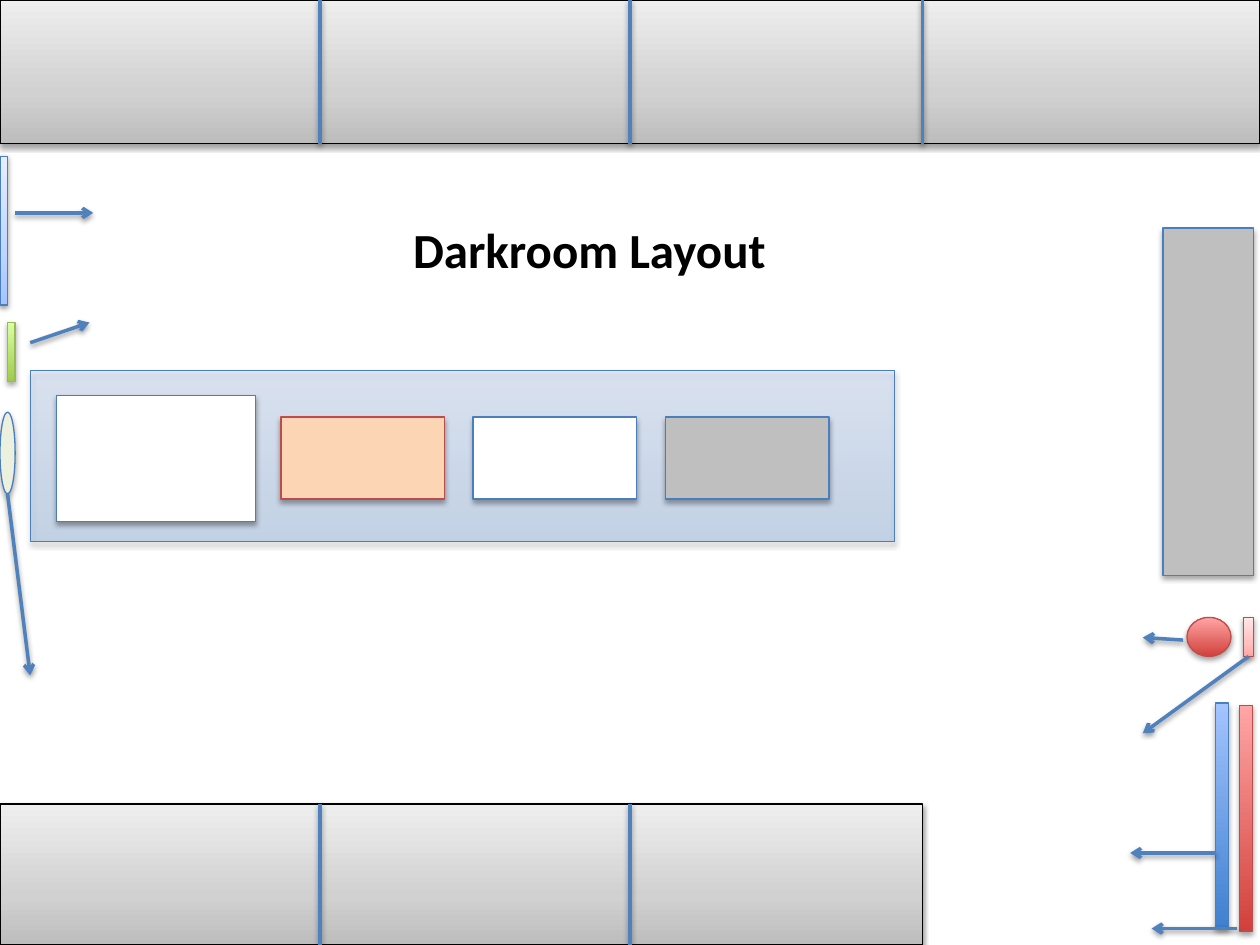
import pptx
import pptx.util
import pptx.dml.color
import pptx.enum.shapes
import pptx.oxml
import pptx.oxml.ns

Inches = pptx.util.Inches
Pt = pptx.util.Pt
RGBColor = pptx.dml.color.RGBColor
RECT = pptx.enum.shapes.MSO_SHAPE.RECTANGLE
OVAL = pptx.enum.shapes.MSO_SHAPE.OVAL
STRAIGHT = pptx.enum.shapes.MSO_CONNECTOR.STRAIGHT
SPACE = pptx.oxml.ns.nsdecls("a")

BLACK = RGBColor(0x00, 0x00, 0x00)
WHITE = RGBColor(0xFF, 0xFF, 0xFF)
GRAY = RGBColor(0xBF, 0xBF, 0xBF)
PEACH = RGBColor(0xFC, 0xD5, 0xB5)
CREAM = RGBColor(0xEB, 0xF1, 0xDE)
BLUE = RGBColor(0x4F, 0x81, 0xBD)
NAVY = RGBColor(0x4B, 0x7E, 0xBC)
RED = RGBColor(0xBF, 0x4C, 0x48)
GREEN = RGBColor(0x98, 0xB9, 0x55)


def shades(*stops):
    return [(pos, RGBColor.from_string(tone)) for pos, tone in stops]


STEEL = shades((0, "BDBDBD"), (35, "D1D1D1"), (100, "EEEEEE"))
SEA = shades((0, "3F80CE"), (100, "A4C4FF"))
SKY = shades((0, "A4C4FF"), (35, "BFD4FF"), (100, "E6EEFF"))
LIME = shades((0, "A0CA4A"), (100, "DAFFA5"))
ROSE = shades((0, "D1403C"), (100, "FFA6A5"))
PINK = shades((0, "FFA6A5"), (35, "FFC0BF"), (100, "FFE7E7"))


def blend(props, stops, alpha):
    marks = "".join(
        f'<a:gs pos="{pos * 1000}"><a:srgbClr val="{tone}">'
        f'<a:alpha val="{alpha * 1000}"/></a:srgbClr></a:gs>'
        for pos, tone in stops)
    props.insert(2, pptx.oxml.parse_xml(
        f'<a:gradFill {SPACE} rotWithShape="1"><a:gsLst>{marks}</a:gsLst>'
        '<a:lin ang="16200000" scaled="0"/></a:gradFill>'))


def shade(props, alpha, gap):
    props.append(pptx.oxml.parse_xml(
        f'<a:effectLst {SPACE}><a:outerShdw blurRad="{Pt(3.1)}" dist="{Pt(gap)}" '
        'dir="5400000" rotWithShape="0"><a:srgbClr val="000000">'
        f'<a:alpha val="{alpha * 1000}"/></a:srgbClr></a:outerShdw></a:effectLst>'))


def block(slide, box, fill, edge=NAVY, kind=RECT, alpha=100):
    shape = slide.shapes.add_shape(kind, *map(Inches, box))
    props = shape._element.spPr
    if isinstance(fill, list):
        blend(props, fill, alpha)
    else:
        shape.fill.solid()
        shape.fill.fore_color.rgb = fill
    shape.line.color.rgb = edge
    shape.line.width = Pt(0.75)
    soft = isinstance(fill, list) and len(fill) == 3
    shade(props, *((38, 1.6) if soft else (35, 1.8)))


def stroke(slide, start, end, arrow=False):
    line = slide.shapes.add_connector(STRAIGHT, *map(Inches, start + end))
    line.line.color.rgb = BLUE
    line.line.width = Pt(2)
    if arrow:
        line.line._get_or_add_ln().append(
            pptx.oxml.parse_xml(f'<a:tailEnd {SPACE} type="arrow"/>'))
    shade(line._element.spPr, 38, 1.6)


def counter(slide, box, seams):
    left, top, width, height = box
    block(slide, box, STEEL, BLACK)
    for seam in seams:
        stroke(slide, (left + seam, top), (left + seam, top + height))


def island(slide, box):
    left, top, width, height = box
    block(slide, box, SEA, alpha=23)
    block(slide, (left + 0.21, top + 0.2, 1.58, 1), WHITE)
    trays = [(PEACH, RED), (WHITE, NAVY), (GRAY, NAVY)]
    for place, (fill, edge) in enumerate(trays):
        spot = left + 1.99 + place * 1.525
        block(slide, (spot, top + 0.37, 1.3, 0.65), fill, edge)


def title(slide, box):
    area = slide.shapes.add_textbox(*map(Inches, box))
    area.text_frame.word_wrap = True
    area.text_frame.text = "Darkroom Layout"
    font = area.text_frame.paragraphs[0].runs[0].font
    font.name = "Calibri"
    font.size = Pt(28)
    font.bold = True
    font.color.rgb = BLACK


def wall(slide, box, parts, arrows):
    left, top = box[:2]
    for (x, y, wide, high), *style in parts:
        block(slide, (left + x, top + y, wide, high), *style)
    for (x, y), (across, down) in arrows:
        start = left + x, top + y
        stroke(slide, start, (start[0] + across, start[1] + down), True)


def west(slide, box):
    wall(slide, box, [
        ((0, 0, 0.06, 1.18), SKY),
        ((0.06, 1.32, 0.06, 0.47), LIME, GREEN),
        ((0, 2.03, 0.12, 0.65), CREAM, NAVY, OVAL),
    ], [
        ((0.12, 0.45), (0.62, 0)),
        ((0.24, 1.48), (0.47, -0.16)),
        ((0.06, 2.68), (0.18, 1.44)),
    ])


def east(slide, box):
    wall(slide, box, [
        ((0.26, 0, 0.72, 2.76), GRAY),
        ((0.45, 3.09, 0.35, 0.31), ROSE, RED, OVAL),
        ((0.9, 3.09, 0.08, 0.31), PINK, RED),
        ((0.68, 3.77, 0.1, 1.79), SEA),
        ((0.87, 3.79, 0.1, 1.79), ROSE, RED),
    ], [
        ((0.42, 3.27), (-0.32, -0.02)),
        ((0.94, 3.4), (-0.84, 0.61)),
        ((0.68, 4.96), (-0.68, 0)),
        ((0.85, 5.56), (-0.68, 0)),
    ])


def main():
    deck = pptx.Presentation()
    deck.slide_width = Inches(10)
    deck.slide_height = Inches(7.5)
    slide = deck.slides.add_slide(deck.slide_layouts[6])
    counter(slide, (0, 0, 10, 1.14), (2.54, 5, 7.32))
    counter(slide, (0, 6.38, 7.32, 1.12), (2.54, 5))
    island(slide, (0.24, 2.94, 6.86, 1.36))
    title(slide, (3.18, 1.69, 3.92, 0.57))
    west(slide, (0, 1.24, 0.74, 4.12))
    east(slide, (8.97, 1.81, 0.98, 5.58))
    deck.save("out.pptx")


if __name__ == "__main__":
    main()
